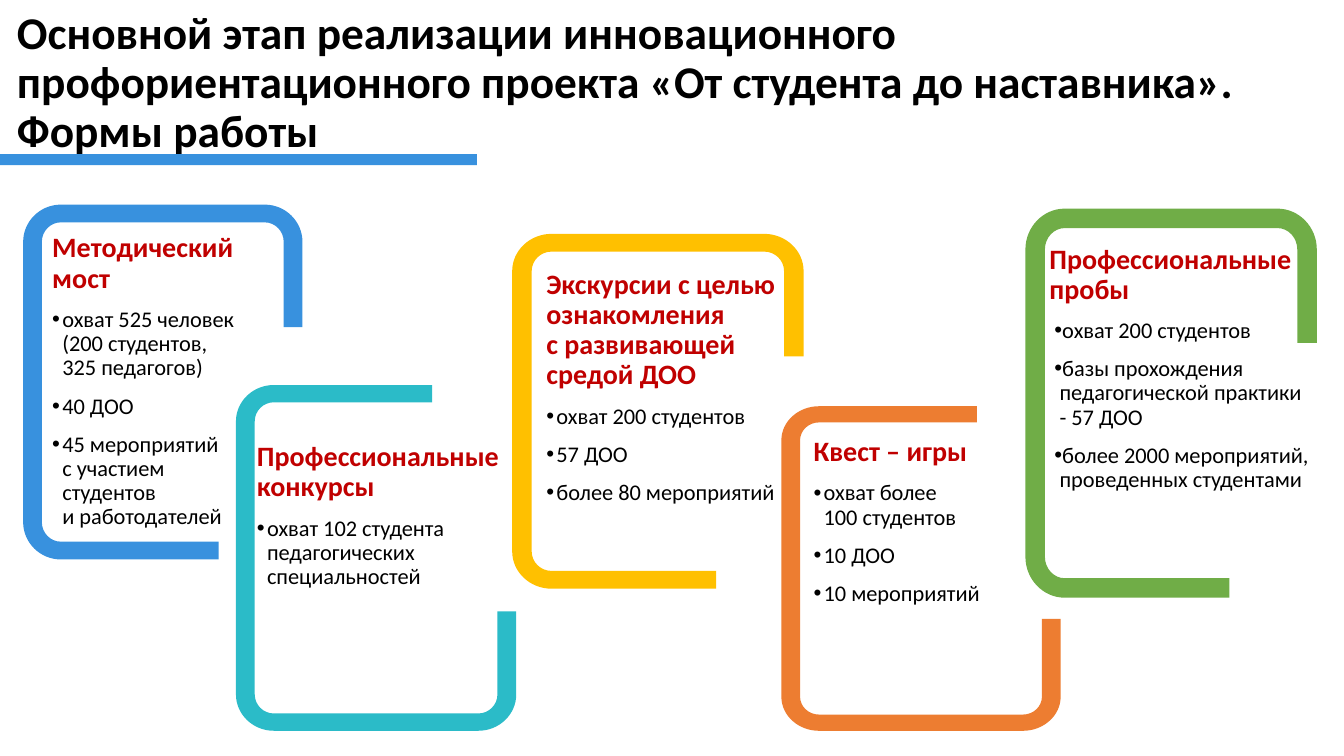
import copy

import lxml.etree
import pptx
import pptx.dml.color
import pptx.enum.shapes
import pptx.enum.text
import pptx.oxml.ns
import pptx.util

RGB = pptx.dml.color.RGBColor
BLUE = RGB(0x38, 0x91, 0xDE)
TEAL = RGB(0x2B, 0xBB, 0xC8)
YELLOW = RGB(0xFF, 0xC0, 0x00)
ORANGE = RGB(0xED, 0x7D, 0x31)
GREEN = RGB(0x70, 0xAD, 0x47)
RED = RGB(0xC0, 0x00, 0x00)
BLACK = RGB(0x00, 0x00, 0x00)

# Content
TITLE = ("Основной этап реализации инновационного профориентационного проекта "
         "«От студента до наставника». Формы работы")
# "frame" and "box" are left, top, width, height in inches;
# "rising" frames are the upside-down ones, open at the top right
WORK_FORMS = [
    dict(heading="Методический мост", color=BLUE, rising=False,
         frame=(0.23, 2.03, 2.77, 3.52), box=(0.42, 2.27, 2.23, 2.97),
         facts=["охват 525 человек (200 студентов,\v325 педагогов)",
                "40 ДОО",
                "45 мероприятий\vс участием студентов\vи работодателей"]),
    dict(heading="Профессиональные конкурсы", color=TEAL, rising=True,
         frame=(2.34, 3.82, 2.78, 3.43), box=(2.45, 4.34, 2.71, 2.49),
         facts=["охват 102 студента педагогических специальностей"]),
    dict(heading="Экскурсии с целью ознакомления\vс развивающей средой ДОО",
         color=YELLOW, rising=False,
         frame=(5.08, 2.32, 2.89, 3.52), box=(5.32, 2.63, 2.59, 3.25),
         facts=["охват 200 студентов", "57 ДОО", "более 80 мероприятий"]),
    dict(heading="Квест – игры", color=ORANGE, rising=True,
         frame=(7.75, 4.03, 2.77, 3.22), box=(7.97, 4.29, 2.29, 2.88),
         facts=["охват более\v100 студентов", "10 ДОО", "10 мероприятий"]),
    dict(heading="Профессиональные пробы", color=GREEN, rising=False,
         frame=(10.17, 2.07, 2.89, 3.86), box=(10.31, 2.38, 2.81, 3.17),
         hanging=0.05,
         facts=["охват 200 студентов",
                "базы прохождения педагогической практики - 57 ДОО",
                "более 2000 мероприятий, проведенных студентами"]),
]

# Frame proportions as shares of its width and height
RX, RY = 0.135, 0.105
BAND_X, BAND_Y = 0.067, 0.05
LONG_END, SHORT_END = 0.7, 0.345
ARC_PULL = 0.55  # Bezier handle length for a quarter circle

# Open frame in a unit square, gap at the bottom right.
# Each step is its end point, plus the square corner it rounds off, if any.
START = (RX, 0)
OUTLINE = [
    ((0, RY), (0, 0)),
    ((0, 1 - RY), None),
    ((RX, 1), (0, 1)),
    ((LONG_END, 1), None),
    ((LONG_END, 1 - BAND_Y), None),
    ((RX, 1 - BAND_Y), None),
    ((BAND_X, 1 - RY), (BAND_X, 1 - BAND_Y)),
    ((BAND_X, RY), None),
    ((RX, BAND_Y), (BAND_X, BAND_Y)),
    ((1 - RX, BAND_Y), None),
    ((1 - BAND_X, RY), (1 - BAND_X, BAND_Y)),
    ((1 - BAND_X, SHORT_END), None),
    ((1, SHORT_END), None),
    ((1, RY), None),
    ((1 - RX, 0), (1, 0)),
]
qn = pptx.oxml.ns.qn


def paint(shape, color):
    shape.shadow.inherit = False
    shape.fill.solid()
    shape.fill.fore_color.rgb = color
    shape.line.fill.background()


def toward(point, target):
    return tuple(p + ARC_PULL * (t - p) for p, t in zip(point, target))


def add_frame(slide, frame, color, rising):
    left, top, width, height = map(pptx.util.Inches, frame)

    def place(point):
        x, y = point
        return round(x * width), round((1 - y if rising else y) * height)

    builder = slide.shapes.build_freeform(*place(START))
    builder.add_line_segments([place(end) for end, _ in OUTLINE], close=True)
    shape = builder.convert_to_shape(left, top)
    paint(shape, color)

    # Round the corners: swap their straight segments for Bezier curves
    segments = list(shape._element.iter(qn("a:lnTo")))
    begin = START
    for segment, (end, corner) in zip(segments, OUTLINE):
        if corner:
            segment.tag = qn("a:cubicBezTo")
            for i, handle in enumerate((toward(begin, corner), toward(end, corner))):
                x, y = place(handle)
                segment.insert(i, lxml.etree.Element(qn("a:pt"), x=str(x), y=str(y)))
        begin = end


def add_text_frame(slide, box):
    frame = slide.shapes.add_textbox(*map(pptx.util.Inches, box)).text_frame
    frame.word_wrap = True
    return frame


def write(paragraph, text, size, color=BLACK, bold=False, before=0, hanging=None):
    """Fill a paragraph; a hanging indent in inches makes it a bullet."""
    paragraph.text = text
    paragraph.line_spacing = 0.9
    paragraph.space_before = pptx.util.Pt(before)
    for run in paragraph.runs:
        run.font.name = "Calibri"
        run.font.size = pptx.util.Pt(size)
        run.font.bold = bold
        run.font.color.rgb = color
    for line_break in paragraph._p.findall(qn("a:br")):
        line_break.insert(0, copy.deepcopy(paragraph.runs[0]._r.rPr))
    if hanging is not None:
        props = paragraph._p.get_or_add_pPr()
        props.set("marL", str(pptx.util.Inches(0.1)))
        props.set("indent", str(-pptx.util.Inches(hanging)))
        lxml.etree.SubElement(props, qn("a:buFont")).set("typeface", "Arial")
        lxml.etree.SubElement(props, qn("a:buChar")).set("char", "•")


def main():
    deck = pptx.Presentation()
    deck.slide_width = pptx.util.Inches(13.33)
    deck.slide_height = pptx.util.Inches(7.5)
    slide = deck.slides.add_slide(deck.slide_layouts[6])

    # Forms of work: frame, heading and bulleted facts
    for form in WORK_FORMS:
        add_frame(slide, form["frame"], form["color"], form["rising"])
        body = add_text_frame(slide, form["box"])
        write(body.paragraphs[0], form["heading"], 20, color=RED, bold=True, before=10)
        for fact in form["facts"]:
            write(body.add_paragraph(), fact, 16, before=10,
                  hanging=form.get("hanging", 0.1))

    # Title with its underline bar
    title = add_text_frame(slide, (0.07, 0.3, 13.11, 1.07))
    title.vertical_anchor = pptx.enum.text.MSO_ANCHOR.MIDDLE
    write(title.paragraphs[0], TITLE, 32.4, bold=True)
    underline = slide.shapes.add_shape(
        pptx.enum.shapes.MSO_SHAPE.RECTANGLE,
        *map(pptx.util.Inches, (0, 1.53, 4.73, 0.11)))
    paint(underline, BLUE)

    deck.save("out.pptx")


if __name__ == "__main__":
    main()
